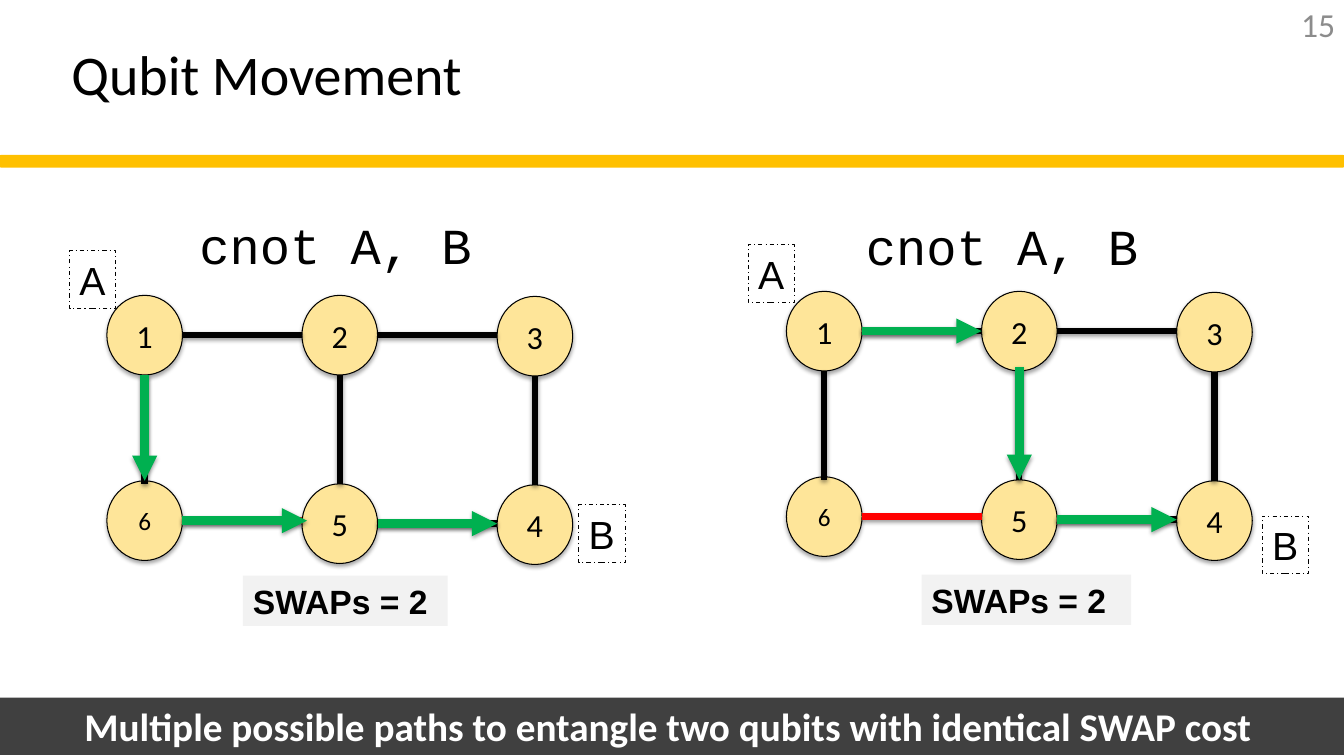
from dataclasses import dataclass
from lxml import etree
from pptx import Presentation
from pptx import util as u
from pptx.dml.color import RGBColor
from pptx.enum import dml, shapes, text
from pptx.oxml import ns

W, H = 13.33, 7.5
KIND = shapes.MSO_SHAPE
ALIGN = text.PP_ALIGN
MID = text.MSO_ANCHOR.MIDDLE


@dataclass(frozen=True)
class Theme:
    gold: str = "FFC000"
    sand: str = "FEE599"
    green: str = "00B050"
    red: str = "FF0000"
    black: str = "000000"
    white: str = "FFFFFF"
    dark: str = "404040"
    pale: str = "F2F2F2"
    gray: str = "8C8C8C"
    body: str = "Calibri"
    sans: str = "Arial"
    mono: str = "Courier New"
    title: int = 40
    code: int = 36
    large: int = 28
    note: int = 24
    node: int = 23
    small: int = 18
    edge: float = 4.5
    arrow: int = 6
    thin: float = 0.75


T = Theme()
NODE_W, NODE_H = 0.75, 0.79
STEP = 1.935
NODES = {
    "1": (0, 0), "2": (STEP, 0), "3": (2 * STEP, 0.01),
    "6": (0, 1.84), "5": (STEP, 1.87), "4": (2 * STEP, 1.88),
}
EDGES = [
    ("1", "2", 0, 0), ("2", "3", 0, 0), ("5", "4", 0, 0),
    ("1", "6", 0, 0.03), ("2", "5", 0, 0), ("3", "4", 0, 0),
]


def inches(*vals):
    return [u.Inches(v) for v in vals]


def color(code):
    return RGBColor.from_string(code)


def effect(item, alpha=None, dist=1.6):
    props = item._element.spPr
    for old in props.findall(ns.qn("a:effectLst")):
        props.remove(old)
    group = etree.SubElement(props, ns.qn("a:effectLst"))
    if alpha:
        shade = etree.SubElement(
            group, ns.qn("a:outerShdw"), blurRad=str(u.Pt(3.1)),
            dist=str(u.Pt(dist)), dir="5400000", rotWithShape="0")
        tint = etree.SubElement(shade, ns.qn("a:srgbClr"), val=T.black)
        etree.SubElement(tint, ns.qn("a:alpha"), val=str(alpha * 1000))


def write(item, words, size, font=T.body, tone=T.black, bold=False,
          align=ALIGN.LEFT, anchor=text.MSO_ANCHOR.TOP, wrap=True, inset=0.1):
    frame = item.text_frame
    frame.word_wrap = wrap
    frame.vertical_anchor = anchor
    frame.margin_left = frame.margin_right = u.Inches(inset)
    para = frame.paragraphs[0]
    para.alignment = align
    run = para.add_run()
    run.text = words
    run.font.size = u.Pt(size)
    run.font.name = font
    run.font.bold = bold
    run.font.color.rgb = color(tone)


def label(slide, box, words, size, **style):
    write(slide.shapes.add_textbox(*inches(*box)), words, size, **style)


def block(slide, kind, box, fill=None, line=None, width=T.thin):
    item = slide.shapes.add_shape(kind, *inches(*box))
    item.shadow.inherit = False
    if fill:
        item.fill.solid()
        item.fill.fore_color.rgb = color(fill)
    else:
        item.fill.background()
    if line:
        item.line.color.rgb = color(line)
        item.line.width = u.Pt(width)
    else:
        item.line.fill.background()
    return item


def link(slide, x, y, hop, tone, width, tip=False):
    start, end, lead, reach = hop
    ax, ay = NODES[start]
    bx, by = NODES[end]
    if ax == bx:
        mid = x + ax + NODE_W / 2
        ends = mid, y + ay + NODE_H + lead, mid, y + by + reach
    else:
        mid = y + ay + NODE_H / 2
        ends = x + ax + NODE_W + lead, mid, x + bx + reach, mid
    item = slide.shapes.add_connector(
        shapes.MSO_CONNECTOR.STRAIGHT, *inches(*ends))
    item.line.color.rgb = color(tone)
    item.line.width = u.Pt(width)
    if tip:
        etree.SubElement(item.line._get_or_add_ln(),
                         ns.qn("a:tailEnd"), type="triangle")
    effect(item, 38)


def tag(slide, x, y, words):
    item = block(slide, KIND.RECTANGLE, (x, y, 0.46, 0.57), line=T.black)
    item.line.dash_style = dml.MSO_LINE.DASH_DOT
    write(item, words, T.large, font=T.sans, wrap=False)


def grid(slide, x, y, route, first, last, code, cost):
    for name, (dx, dy) in NODES.items():
        item = block(slide, KIND.OVAL, (x + dx, y + dy, NODE_W, NODE_H),
                     T.sand, T.black)
        effect(item, 35, 1.8)
        write(item, name, T.small if name == "6" else T.node,
              align=ALIGN.CENTER, anchor=MID, inset=0)
    for hop in EDGES:
        link(slide, x, y, hop, T.black, T.edge)
    link(slide, x, y, ("6", "5", 0, 0), T.red, T.edge)
    for hop in route:
        link(slide, x, y, hop, T.green, T.arrow, tip=True)
    dx, dy, wide = cost
    item = block(slide, KIND.RECTANGLE, (x + dx, y + dy, wide, 0.5), T.pale)
    write(item, "SWAPs = 2", T.note, font=T.sans, bold=True)
    for words, (dx, dy) in (("A", first), ("B", last)):
        tag(slide, x + dx, y + dy, words)
    dx, dy = code
    label(slide, (x + dx, y + dy, 2.93, 0.71), "cnot A, B", T.code,
          font=T.mono, wrap=False)


def header(slide, x, y, wide):
    block(slide, KIND.ROUNDED_RECTANGLE, (x, y + 1.55, wide, 0.1),
          T.gold, T.gold, 2)
    label(slide, (x + 0.61, y + 0.1, wide * 2 / 3, 1.25), "Qubit Movement",
          T.title, anchor=MID)
    label(slide, (x + wide - 0.7, y, 0.71, 0.48), "15", T.note,
          tone=T.gray, align=ALIGN.RIGHT, anchor=MID)


def banner(slide, box):
    item = block(slide, KIND.RECTANGLE, box, T.dark)
    write(item, "Multiple possible paths to entangle two qubits "
          "with identical SWAP cost ", T.large, tone=T.white, bold=True,
          align=ALIGN.CENTER, anchor=MID)


def main():
    deck = Presentation()
    deck.slide_width, deck.slide_height = inches(W, H)
    slide = deck.slides.add_slide(deck.slide_layouts[6])
    header(slide, 0, 0, W)
    grid(slide, 1.06, 2.93,
         [("1", "6", 0, 0), ("6", "5", 0, 0.05), ("5", "4", 0, 0)],
         first=(-0.37, -0.44), last=(4.68, 2.08),
         code=(0.82, -0.86), cost=(1.35, 2.78, 2.03))
    grid(slide, 7.8, 2.89,
         [("1", "2", 0, 0), ("2", "5", -0.04, 0), ("5", "4", 0, 0)],
         first=(-0.38, -0.46), last=(4.72, 2.23),
         code=(0.69, -0.81), cost=(1.34, 2.81, 2.08))
    banner(slide, (0, 6.92, W, 0.57))
    deck.save("out.pptx")


if __name__ == "__main__":
    main()
